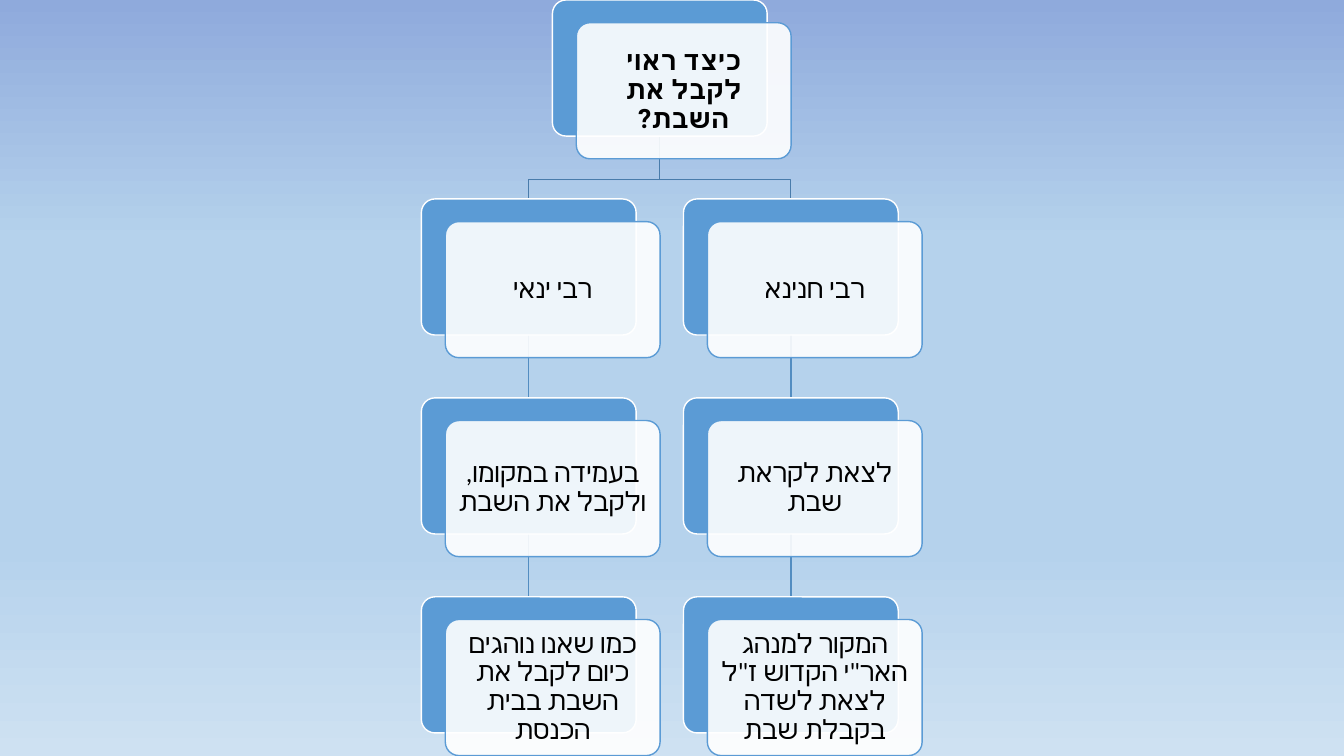
"""Build a hierarchy slide about two ways of welcoming the Sabbath."""
from dataclasses import dataclass

from lxml import etree
from pptx import Presentation
from pptx.dml.color import RGBColor
from pptx.enum.shapes import MSO_CONNECTOR, MSO_SHAPE
from pptx.enum.text import MSO_ANCHOR, PP_ALIGN
from pptx.oxml.ns import qn
from pptx.util import Pt

ROUNDED = MSO_SHAPE.ROUNDED_RECTANGLE
STRAIGHT = MSO_CONNECTOR.STRAIGHT
CENTER = PP_ALIGN.CENTER
MIDDLE = MSO_ANCHOR.MIDDLE

BLUE = RGBColor(0x5B, 0x9B, 0xD5)
WHITE = RGBColor(0xFF, 0xFF, 0xFF)
BLACK = RGBColor(0x00, 0x00, 0x00)
BRANCH_BLUE = RGBColor(0x49, 0x7C, 0xAB)
LINK_BLUE = RGBColor(0x53, 0x8D, 0xC1)
SKY = [
    (0, RGBColor(0x8F, 0xAA, 0xDC)),
    (32, RGBColor(0xB5, 0xD2, 0xEC)),
    (72, RGBColor(0xB5, 0xD2, 0xEC)),
    (100, RGBColor(0xCE, 0xE1, 0xF2)),
]

CARD_W, CARD_H = 153.4, 97.2
FRONT_DX, FRONT_DY = 17.1, 16.2
LEVEL_PITCH = 142.1
LEFT_X, RIGHT_X = 301, 488.2
ROOT_X = (LEFT_X + RIGHT_X) / 2
BRANCH_Y = 128.2
INSET = 5.76


@dataclass
class Node:
    text: str
    x: float
    level: int
    font: str = "Calibri"
    bold: bool = False

    @property
    def top(self) -> float:
        return self.level * LEVEL_PITCH

    @property
    def bottom(self) -> float:
        return self.top + CARD_H

    @property
    def center(self) -> float:
        return self.x + CARD_W / 2


ROOT = Node("כיצד ראוי לקבל את השבת?", ROOT_X, 0, "Roboto", True)
COLUMNS = [
    [Node(text, x, level) for level, text in enumerate(texts, 1)]
    for x, texts in [
        (LEFT_X, ["רבי ינאי", "בעמידה במקומו, ולקבל את השבת",
                  "כמו שאנו נוהגים כיום לקבל את השבת בבית הכנסת"]),
        (RIGHT_X, ["רבי חנינא", "לצאת לקראת שבת",
                   "המקור למנהג האר\"י הקדוש ז\"ל לצאת לשדה בקבלת שבת"]),
    ]
]


def paint_background(s) -> None:
    """Fill the slide with the vertical sky gradient."""
    fill = s.background.fill
    fill.gradient()
    fill.gradient_angle = 270
    stops = s.element.find(".//" + qn("a:gsLst"))
    for stop in list(stops):
        stops.remove(stop)
    for percent, color in SKY:
        stop = etree.SubElement(stops, qn("a:gs"), pos=str(percent * 1000))
        etree.SubElement(stop, qn("a:srgbClr"), val=str(color))


def add_branch(s, parent: Node, child: Node) -> None:
    """Draw a bent line from a parent down to a child."""
    builder = s.shapes.build_freeform(Pt(parent.center), Pt(parent.bottom))
    builder.add_line_segments(
        [(Pt(parent.center), Pt(BRANCH_Y)), (Pt(child.center), Pt(BRANCH_Y)),
         (Pt(child.center), Pt(child.top))], close=False)
    sp = builder.convert_to_shape()
    sp.shadow.inherit = False
    sp.fill.background()
    sp.line.color.rgb = BRANCH_BLUE
    sp.line.width = Pt(1)


def add_link(s, parent: Node, child: Node) -> None:
    """Draw a straight line from a parent down to a child."""
    cxn = s.shapes.add_connector(STRAIGHT, Pt(parent.center), Pt(parent.bottom),
                                 Pt(child.center), Pt(child.top))
    cxn.line.color.rgb = LINK_BLUE
    cxn.line.width = Pt(1)
    etree.SubElement(cxn.element.spPr, qn("a:effectLst"))


def add_card(s, x: float, y: float, fill: RGBColor, line: RGBColor):
    """Add one rounded card and return it."""
    sp = s.shapes.add_shape(ROUNDED, Pt(x), Pt(y), Pt(CARD_W), Pt(CARD_H))
    sp.adjustments[0] = 0.1
    sp.shadow.inherit = False
    sp.fill.solid()
    sp.fill.fore_color.rgb = fill
    sp.line.color.rgb = line
    sp.line.width = Pt(1)
    return sp


def set_text(sp, text: str, *, font: str, size: float = 19,
             color: RGBColor = BLACK, bold: bool = False) -> None:
    """Write centred right-to-left text into a shape."""
    tf = sp.text_frame
    tf.word_wrap = True
    tf.vertical_anchor = MIDDLE
    tf.margin_left = tf.margin_right = Pt(INSET)
    tf.margin_top = tf.margin_bottom = Pt(INSET)
    p = tf.paragraphs[0]
    p.alignment = CENTER
    p.line_spacing = 0.9
    p._p.get_or_add_pPr().set("rtl", "1")
    r = p.add_run()
    r.text = text
    r.font.name = font
    r.font.size = Pt(size)
    r.font.bold = bold
    r.font.color.rgb = color
    etree.SubElement(r.font._element, qn("a:cs"), typeface=font)


def add_node(s, node: Node) -> None:
    """Draw a blue back card and a translucent front card with the text."""
    add_card(s, node.x, node.top, BLUE, WHITE)
    front = add_card(s, node.x + FRONT_DX, node.top + FRONT_DY, WHITE, BLUE)
    color = front.element.spPr.find(qn("a:solidFill")).find(qn("a:srgbClr"))
    etree.SubElement(color, qn("a:alpha"), val="90000")
    set_text(front, node.text, font=node.font, bold=node.bold)


def main() -> None:
    """Build and save the slide."""
    prs = Presentation()
    prs.slide_width, prs.slide_height = Pt(960), Pt(540)
    s = prs.slides.add_slide(prs.slide_layouts[6])
    paint_background(s)
    for column in COLUMNS:
        add_branch(s, ROOT, column[0])
        for parent, child in zip(column, column[1:]):
            add_link(s, parent, child)
    for node in [ROOT, *COLUMNS[0], *COLUMNS[1]]:
        add_node(s, node)
    prs.save("out.pptx")


if __name__ == "__main__":
    main()
